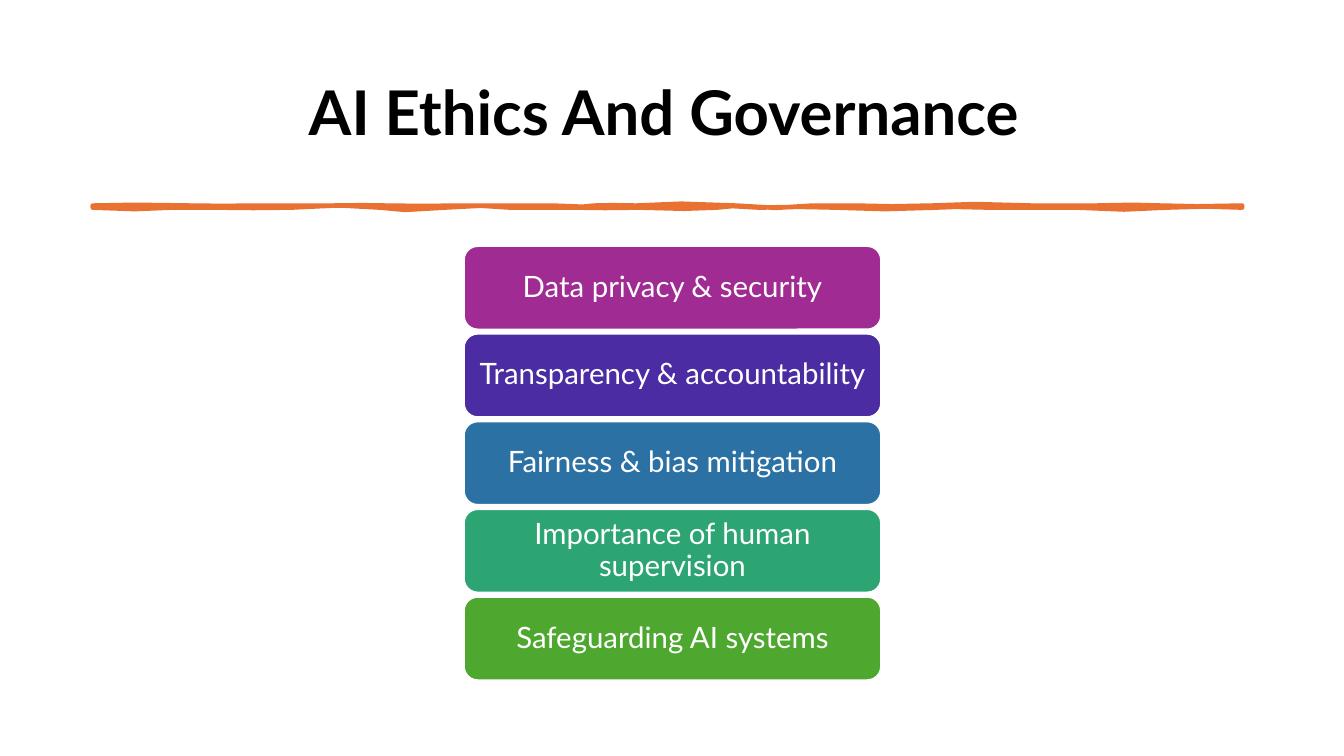
from dataclasses import dataclass

import pptx
import pptx.dml.color
import pptx.enum.shapes
import pptx.enum.text
import pptx.slide
import pptx.text.text
import pptx.util
from pptx.dml.color import RGBColor
from pptx.util import Inches

WHITE = RGBColor(0xFF, 0xFF, 0xFF)
BLACK = RGBColor(0x00, 0x00, 0x00)
ORANGE = RGBColor(0xE9, 0x71, 0x32)
PURPLE = RGBColor(0xA0, 0x2B, 0x93)
INDIGO = RGBColor(0x4B, 0x2C, 0xA2)
BLUE = RGBColor(0x2C, 0x71, 0xA4)
TEAL = RGBColor(0x2D, 0xA5, 0x73)
GREEN = RGBColor(0x4E, 0xA7, 0x2E)
FONT = "Lato"


@dataclass
class Principle:
    label: str
    color: RGBColor


PRINCIPLES = [
    Principle("Data privacy & security", PURPLE),
    Principle("Transparency & accountability", INDIGO),
    Principle("Fairness & bias mitigation", BLUE),
    Principle("Importance of human supervision", TEAL),
    Principle("Safeguarding AI systems", GREEN),
]
STACK_LEFT, STACK_TOP, STACK_STEP = 4.6, 2.44, 0.87
BOX_WIDTH, BOX_HEIGHT = 4.14, 0.83

# Hand-drawn rule: Bézier curves as (control, control, end) in inches
RULE_START = (0.92, 2.04)
RULE_CURVES = [
    # Upper edge, left to right
    ((1.19, 2.04), (1.44, 2.02), (1.9, 2.04)),
    ((2.37, 2.06), (2.2, 2.03), (2.44, 2.04)),
    ((2.67, 2.05), (3.03, 2.03), (3.31, 2.04)),
    ((3.6, 2.05), (3.59, 2.02), (3.84, 2.04)),
    ((4.1, 2.06), (4.23, 2.03), (4.6, 2.04)),
    ((4.98, 2.05), (5.14, 2.03), (5.48, 2.04)),
    ((5.81, 2.05), (5.81, 2.06), (5.89, 2.04)),
    ((5.98, 2.02), (6.15, 2.05), (6.31, 2.04)),
    ((6.47, 2.03), (7.01, 2.0), (7.3, 2.04)),
    ((7.59, 2.08), (7.81, 2.06), (8.06, 2.04)),
    ((8.31, 2.02), (8.27, 2.06), (8.48, 2.04)),
    ((8.68, 2.02), (9.01, 2.08), (9.24, 2.04)),
    ((9.47, 2.0), (9.82, 2.04), (10.23, 2.04)),
    ((10.63, 2.04), (10.63, 2.04), (10.87, 2.04)),
    ((11.12, 2.04), (11.36, 2.02), (11.52, 2.04)),
    ((11.68, 2.06), (12.03, 2.04), (12.32, 2.04)),
    # Lower edge, right to left
    ((12.32, 2.05), (12.32, 2.05), (12.32, 2.06)),
    ((12.05, 2.06), (11.89, 2.03), (11.56, 2.06)),
    ((11.22, 2.09), (11.1, 2.08), (10.68, 2.06)),
    ((10.27, 2.04), (10.23, 2.08), (9.81, 2.06)),
    ((9.39, 2.04), (9.52, 2.06), (9.28, 2.06)),
    ((9.04, 2.06), (8.51, 2.1), (8.29, 2.06)),
    ((8.06, 2.02), (7.82, 2.08), (7.53, 2.06)),
    ((7.24, 2.04), (7.25, 2.04), (7.11, 2.06)),
    ((6.98, 2.08), (6.61, 2.07), (6.35, 2.06)),
    ((6.09, 2.05), (5.9, 2.08), (5.7, 2.06)),
    ((5.51, 2.04), (5.28, 2.08), (5.06, 2.06)),
    ((4.83, 2.04), (4.73, 2.03), (4.41, 2.06)),
    ((4.09, 2.09), (3.9, 2.09), (3.77, 2.06)),
    ((3.63, 2.03), (3.1, 2.03), (2.89, 2.06)),
    ((2.68, 2.09), (2.35, 2.04), (2.13, 2.06)),
    ((1.92, 2.08), (1.89, 2.04), (1.71, 2.06)),
    ((1.54, 2.08), (1.14, 2.08), (0.92, 2.06)),
]


def add_span(para: pptx.text.text._Paragraph, text: str, size: float,
             color: RGBColor, bold: bool = False) -> None:
    span = para.add_run()
    span.text = text
    span.font.name = FONT
    span.font.size = pptx.util.Pt(size)
    span.font.bold = bold
    span.font.color.rgb = color


def center_para(frame: pptx.text.text.TextFrame) -> pptx.text.text._Paragraph:
    frame.word_wrap = True
    frame.auto_size = pptx.enum.text.MSO_AUTO_SIZE.NONE
    frame.vertical_anchor = pptx.enum.text.MSO_ANCHOR.MIDDLE
    para = frame.paragraphs[0]
    para.alignment = pptx.enum.text.PP_ALIGN.CENTER
    para.line_spacing = 0.9
    return para


def add_title(page: pptx.slide.Slide) -> None:
    title = page.shapes.title
    title.left, title.top = Inches(0.92), Inches(0.4)
    title.width, title.height = Inches(11.5), Inches(1.45)
    para = center_para(title.text_frame)
    add_span(para, "AI Ethics And Governance", 44, BLACK, bold=True)
    add_span(para, " ", 48, BLACK)


def rule_points() -> list[tuple[int, int]]:
    """Return the middle and the end of each curve."""
    points = []
    start = RULE_START
    for first, second, end in RULE_CURVES:
        middle = [(a + 3 * b + 3 * c + d) / 8 for a, b, c, d in zip(start, first, second, end)]
        points += [(Inches(x), Inches(y)) for x, y in (middle, end)]
        start = end
    return points


def add_rule(page: pptx.slide.Slide) -> None:
    builder = page.shapes.build_freeform(Inches(RULE_START[0]), Inches(RULE_START[1]))
    builder.add_line_segments(rule_points(), close=True)
    rule = builder.convert_to_shape()
    rule.shadow.inherit = False
    rule.fill.solid()
    rule.fill.fore_color.rgb = ORANGE
    rule.line.color.rgb = ORANGE
    rule.line.width = pptx.util.Pt(3.25)


def add_principle(page: pptx.slide.Slide, principle: Principle, top: float) -> None:
    box = page.shapes.add_shape(
        pptx.enum.shapes.MSO_SHAPE.ROUNDED_RECTANGLE,
        Inches(STACK_LEFT), Inches(top), Inches(BOX_WIDTH), Inches(BOX_HEIGHT))
    box.shadow.inherit = False
    box.fill.solid()
    box.fill.fore_color.rgb = principle.color
    box.line.color.rgb = WHITE
    box.line.width = pptx.util.Pt(1.5)
    frame = box.text_frame
    # The rounded corners already inset the text by 0.04
    frame.margin_left = frame.margin_right = Inches(0.09)
    frame.margin_top = frame.margin_bottom = Inches(0.04)
    add_span(center_para(frame), principle.label, 21, WHITE)


def main() -> None:
    deck = pptx.Presentation()
    deck.slide_width, deck.slide_height = Inches(13.33), Inches(7.5)
    page = deck.slides.add_slide(deck.slide_layouts.get_by_name("Title Only"))
    page.background.fill.solid()
    page.background.fill.fore_color.rgb = WHITE

    # Heading and rule
    add_title(page)
    add_rule(page)

    # Stack of principles
    for index, principle in enumerate(PRINCIPLES):
        add_principle(page, principle, STACK_TOP + index * STACK_STEP)

    deck.save("out.pptx")


if __name__ == "__main__":
    main()
